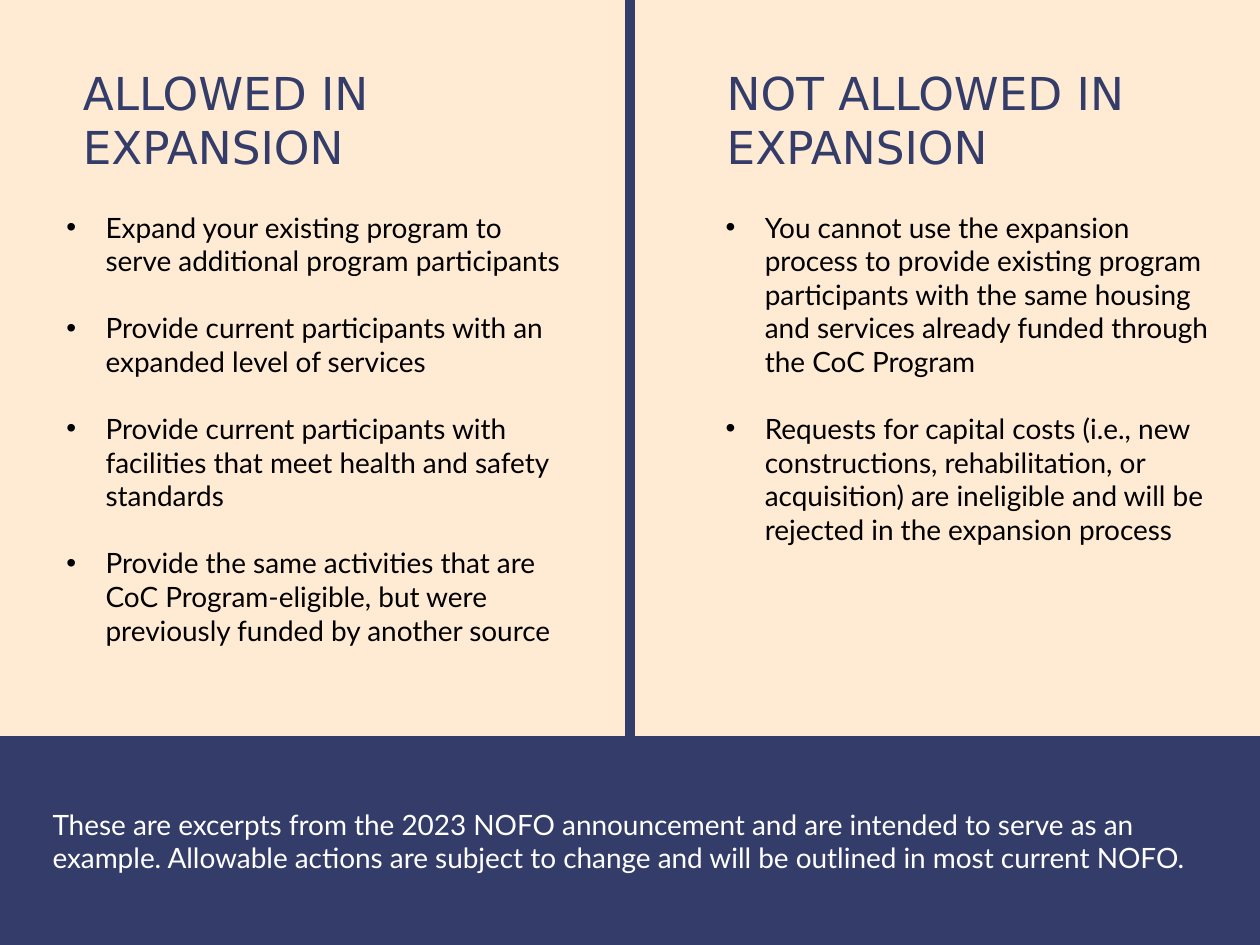
"""Build a slide comparing what is allowed and not allowed in an expansion."""
from lxml import etree
from pptx import Presentation
from pptx.dml.color import RGBColor
from pptx.enum.shapes import MSO_CONNECTOR, MSO_SHAPE
from pptx.enum.text import MSO_ANCHOR
from pptx.oxml.ns import qn
from pptx.util import Cm, Pt

RECTANGLE = MSO_SHAPE.RECTANGLE
STRAIGHT = MSO_CONNECTOR.STRAIGHT
TOP, BOTTOM = MSO_ANCHOR.TOP, MSO_ANCHOR.BOTTOM

COLORS = {"paper": "FFEBD3", "navy": "343D6A", "body": "000000", "note": "FFFFFF"}
TITLE_FONT, BODY_FONT = "DejaVu Sans", "Lato"
TITLE_SIZE, BODY_SIZE, ITEM_GAP = 25.9, 16, 19.2

COLUMNS = [
    {
        "title": "ALLOWED IN EXPANSION",
        "title_left": 1.42,
        "list_left": -0.18,
        "list_height": 11.38,
        "items": [
            "Expand your existing program to serve additional program participants",
            "Provide current participants with an expanded level of services",
            "Provide current participants with facilities that meet health and safety standards",
            "Provide the same activities that are CoC Program-eligible, but were previously "
            "funded by another source",
        ],
    },
    {
        "title": "NOT ALLOWED IN EXPANSION",
        "title_left": 14.4,
        "list_left": 13.11,
        "list_height": 8.64,
        "items": [
            "You cannot use the expansion process to provide existing program participants "
            "with the same housing and services already funded through the CoC Program",
            "Requests for capital costs (i.e., new constructions, rehabilitation, or "
            "acquisition) are ineligible and will be rejected in the expansion process",
        ],
    },
]
NOTE = (
    "These are excerpts from the 2023 NOFO announcement and are intended to serve as an "
    "example. Allowable actions are subject to change and will be outlined in most current NOFO."
)

PAGE_WIDTH, PAGE_HEIGHT = 25.4, 19.05
FOOTER_TOP, DIVIDER_END = 14.86, 18.64
TITLE_TOP, TITLE_WIDTH, TITLE_HEIGHT = 1.14, 10.26, 2.49
LIST_TOP, LIST_WIDTH = 4.11, 11.86
TEXT_INDENT, BULLET_HANG = 2.06, 0.79


def color(name):
    return RGBColor.from_string(COLORS[name])


def add_bullet(para):
    props = para._p.get_or_add_pPr()
    props.set("marL", str(Cm(TEXT_INDENT)))
    props.set("indent", str(-Cm(BULLET_HANG)))
    etree.SubElement(props, qn("a:buFont")).set("typeface", "Arial")
    etree.SubElement(props, qn("a:buChar")).set("char", "•")


def add_text(page, frame, texts, font, size, ink, anchor=TOP, bulleted=False):
    box = page.shapes.add_textbox(*map(Cm, frame))
    box.text_frame.word_wrap = True
    box.text_frame.vertical_anchor = anchor
    for index, text in enumerate(texts):
        para = box.text_frame.add_paragraph() if index else box.text_frame.paragraphs[0]
        if index:
            para.space_before = Pt(ITEM_GAP)
        if bulleted:
            para.level = 1
            add_bullet(para)
        span = para.add_run()
        span.text = text
        span.font.name = font
        span.font.size = Pt(size)
        span.font.color.rgb = color(ink)


def add_footer(page):
    footer = page.shapes.add_shape(
        RECTANGLE, 0, Cm(FOOTER_TOP), Cm(PAGE_WIDTH), Cm(PAGE_HEIGHT - FOOTER_TOP)
    )
    footer.shadow.inherit = False
    footer.fill.solid()
    footer.fill.fore_color.rgb = color("navy")
    footer.line.color.rgb = color("navy")
    footer.line.width = Pt(1)


def add_divider(page):
    middle = Cm(PAGE_WIDTH / 2)
    divider = page.shapes.add_connector(STRAIGHT, middle, 0, middle, Cm(DIVIDER_END))
    divider.line.color.rgb = color("navy")
    divider.line.width = Pt(6)
    etree.SubElement(divider._element.spPr, qn("a:effectLst"))


def main():
    deck = Presentation()
    deck.slide_width, deck.slide_height = Cm(PAGE_WIDTH), Cm(PAGE_HEIGHT)
    page = deck.slides.add_slide(deck.slide_layouts[6])
    page.background.fill.solid()
    page.background.fill.fore_color.rgb = color("paper")
    add_footer(page)
    add_divider(page)
    add_text(page, (0.81, 16.15, 24.59, 1.63), [NOTE], BODY_FONT, BODY_SIZE, "note")
    for column in COLUMNS:
        title_frame = (column["title_left"], TITLE_TOP, TITLE_WIDTH, TITLE_HEIGHT)
        add_text(page, title_frame, [column["title"]], TITLE_FONT, TITLE_SIZE, "navy", BOTTOM)
        list_frame = (column["list_left"], LIST_TOP, LIST_WIDTH, column["list_height"])
        add_text(page, list_frame, column["items"], BODY_FONT, BODY_SIZE, "body", bulleted=True)
    deck.save("out.pptx")


if __name__ == "__main__":
    main()
